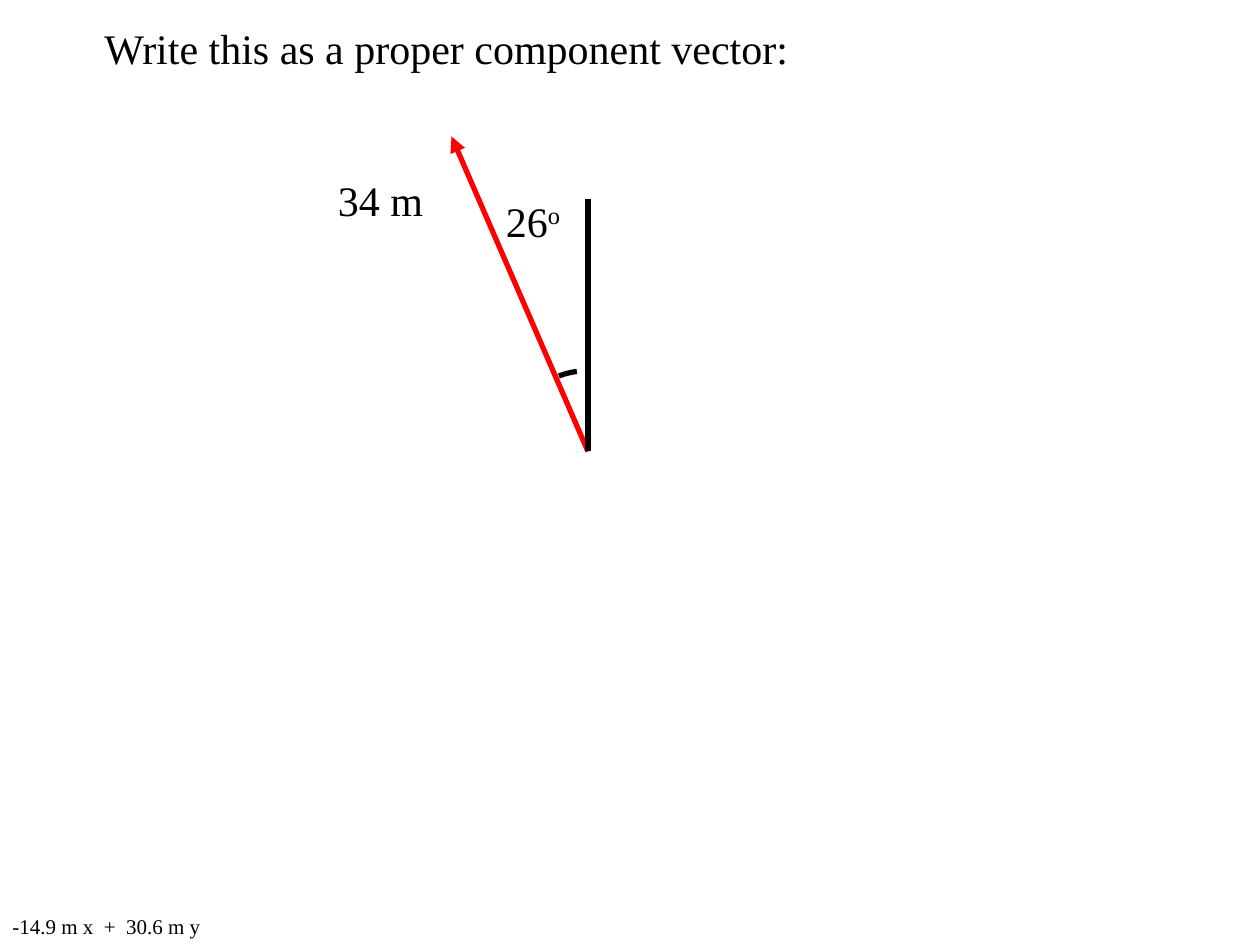
from math import cos, radians, sin

from pptx import Presentation
from pptx.dml.color import RGBColor
from pptx.enum.shapes import MSO_CONNECTOR as Connector
from pptx.enum.text import MSO_AUTO_SIZE as AutoSize
from pptx.oxml.ns import qn
from pptx.util import Pt
from lxml.etree import SubElement

COLORS = {"ink": "000000", "vector": "FF0000"}


class VectorSlide:
    """Draws text, lines and angle arcs in one style on the current slide."""

    font_name = "Times New Roman"
    line_width = 3

    def __init__(self, presentation):
        self.slide = presentation.slides.add_slide(presentation.slide_layouts[6])

    def style_line(self, shape, color):
        shape.line.color.rgb = RGBColor.from_string(COLORS[color])
        shape.line.width = Pt(self.line_width)

    def text(self, words, left, top, width, height=36, size=24, superscript=""):
        shape = self.slide.shapes.add_textbox(Pt(left), Pt(top), Pt(width), Pt(height))
        frame = shape.text_frame
        for name, value in {"word_wrap": False, "auto_size": AutoSize.SHAPE_TO_FIT_TEXT}.items():
            setattr(frame, name, value)
        paragraph = frame.paragraphs[0]
        font_format = {"name": self.font_name, "size": Pt(size)}
        for content, baseline in ((words, 0), (superscript, 30000)):
            if not content:
                continue
            run = paragraph.add_run()
            run.text = content
            for name, value in font_format.items():
                setattr(run.font, name, value)
            run.font.color.rgb = RGBColor.from_string(COLORS["ink"])
            if baseline:
                run._r.get_or_add_rPr().set("baseline", str(baseline))

    def line(self, start, end, color="ink", arrow=False):
        points = [Pt(value) for value in (*start, *end)]
        connector = self.slide.shapes.add_connector(Connector.STRAIGHT, *points)
        self.style_line(connector, color)
        if arrow:
            SubElement(connector.line._get_or_add_ln(), qn("a:tailEnd"), type="triangle")
        SubElement(connector._element.spPr, qn("a:effectLst"))

    def arc(self, center, radius, first, last, rotation, steps=6):
        angles = [radians(first + (last - first) * step / steps) for step in range(steps + 1)]
        points = [
            (Pt(center[0] + radius * cos(angle)), Pt(center[1] - radius * sin(angle)))
            for angle in angles
        ]
        builder = self.slide.shapes.build_freeform(Pt(center[0]), Pt(center[1]))
        builder.move_to(*points[0])
        builder.add_line_segments(points[1:], close=False)
        shape = builder.convert_to_shape()
        shape.rotation = rotation
        shape.shadow.inherit = False
        shape.fill.background()
        self.style_line(shape, "ink")


def main():
    presentation = Presentation()
    presentation.slide_width, presentation.slide_height = Pt(720), Pt(540)
    canvas = VectorSlide(presentation)
    origin = (336, 258)
    canvas.arc(center=(344.2, 249.1), radius=42.2, first=123.3, last=137.8, rotation=26.4)
    canvas.line(origin, (258, 78), color="vector", arrow=True)
    canvas.text("26", 282, 108, 47, superscript="o")
    canvas.line((336, 114), origin)
    canvas.text("Write this as a proper component vector:", 52.5, 9.4, 409)
    canvas.text("34 m", 186, 96, 63)
    canvas.text("-14.9 m x  +  30.6 m y", 0, 518.4, 123, height=21.6, size=12)
    presentation.save("out.pptx")


if __name__ == "__main__":
    main()
